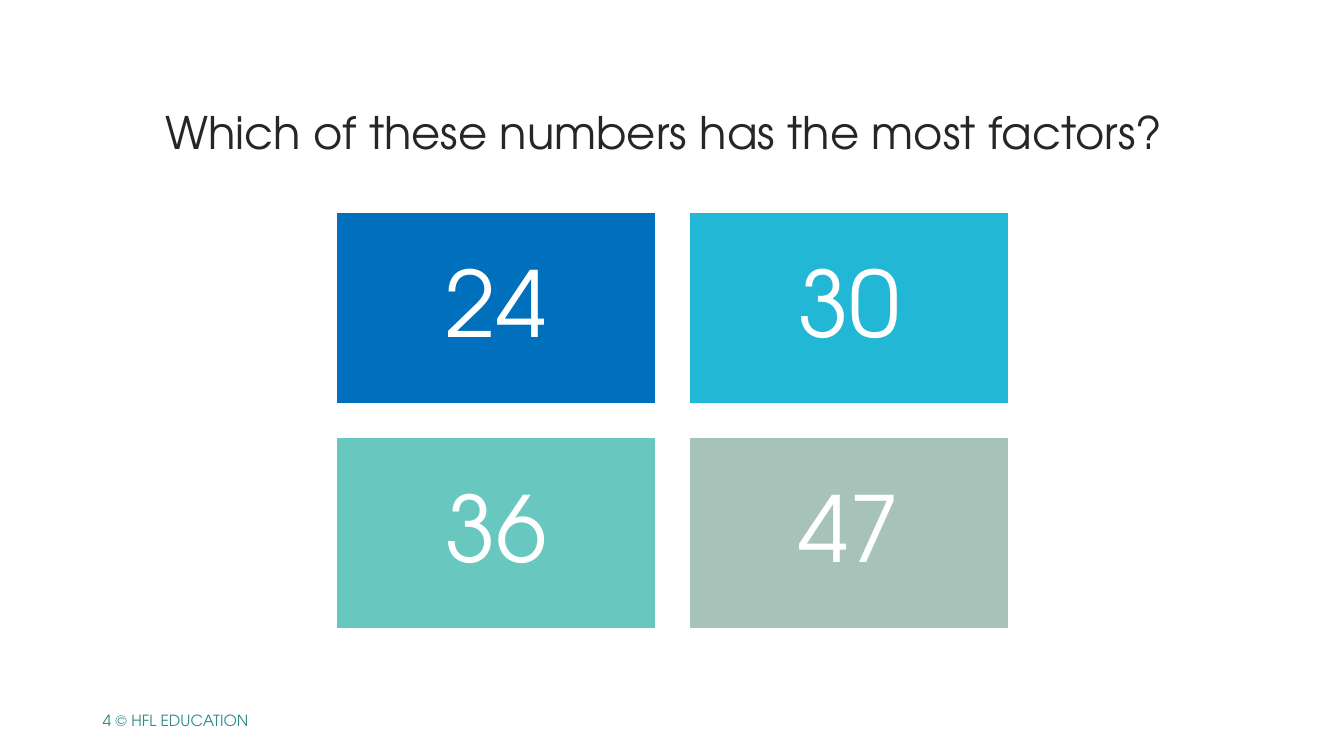
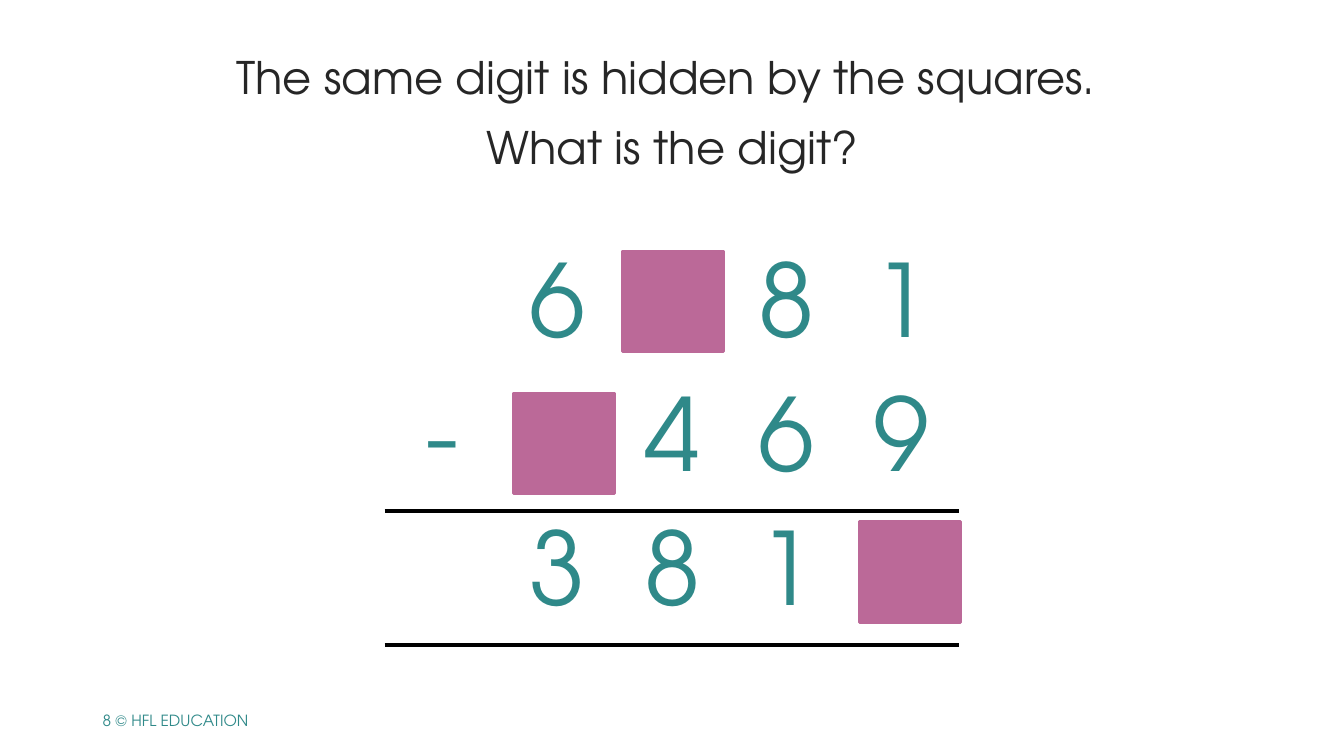
import pptx
import pptx.dml.color
import pptx.enum.shapes
import pptx.enum.text
import pptx.oxml
import pptx.oxml.ns
import pptx.util

Inches, Pt = pptx.util.Inches, pptx.util.Pt
MIDDLE = pptx.enum.text.MSO_ANCHOR.MIDDLE
LEFT = pptx.enum.text.PP_ALIGN.LEFT
CENTER = pptx.enum.text.PP_ALIGN.CENTER
RECTANGLE = pptx.enum.shapes.MSO_SHAPE.RECTANGLE

FONT = "TeX Gyre Adventor"
INK, TEAL, PINK, WHITE, BLACK = "262626", "2F8989", "BB6998", "FFFFFF", "000000"
WIDTH, HEIGHT = 13.33, 7.5


def rgb(code):
    return pptx.dml.color.RGBColor.from_string(code)


def write(frame, lines, size, colour, **paragraph_format):
    for index, line in enumerate(lines):
        paragraph = frame.paragraphs[0] if index == 0 else frame.add_paragraph()
        for name, value in paragraph_format.items():
            setattr(paragraph, name, value)
        run = paragraph.add_run()
        run.text = line
        for name, value in {"name": FONT, "size": Pt(size)}.items():
            setattr(run.font, name, value)
        run.font.color.rgb = rgb(colour)


deck = pptx.Presentation()
deck.slide_width, deck.slide_height = Inches(WIDTH), Inches(HEIGHT)

# Question and footer on every slide: number, box of the question, its lines
questions = [
    (4, (0.37, 0.99, 12.44, 0.9), ["Which of these numbers has the most factors?"]),
    (8, (1.75, 0.44, 9.84, 1.65),
     ["The same digit is hidden by the squares. ", "What is the digit?"]),
]
pages = []
for number, place, lines in questions:
    page = deck.slides.add_slide(deck.slide_layouts[6])
    footer = page.shapes.add_textbox(*map(Inches, (0.92, 6.95, 2.75, 0.4))).text_frame
    footer.word_wrap = True
    footer.vertical_anchor = MIDDLE
    write(footer, [f"{number} © HFL EDUCATION"], 11, TEAL, alignment=LEFT)
    question = page.shapes.add_textbox(*map(Inches, place)).text_frame
    question.word_wrap = True
    write(question, lines, 32, INK, alignment=CENTER, space_after=Pt(12))
    pages.append(page)
factors_page, subtraction_page = pages

# Two by two grid of numbers to choose from
choices = [("24", "0070BD"), ("30", "21B7D5"), ("36", "68C7BF"), ("47", "A6C2B9")]
choice_width, choice_height, gap = 3.18, 1.91, 0.32
choices_left, choices_top = WIDTH / 4, HEIGHT * 0.28
insets = dict.fromkeys(
    ["margin_left", "margin_top", "margin_right", "margin_bottom"], Inches(0.27))
for index, (number, colour) in enumerate(choices):
    row, column = divmod(index, 2)
    choice = factors_page.shapes.add_shape(
        RECTANGLE,
        Inches(choices_left + column * (choice_width + gap)),
        Inches(choices_top + row * (choice_height + gap)),
        Inches(choice_width), Inches(choice_height))
    choice.shadow.inherit = False
    choice.fill.solid()
    choice.fill.fore_color.rgb = rgb(colour)
    choice.line.color.rgb = rgb(WHITE)
    choice.line.width = Pt(2)
    for name, value in {**insets, "vertical_anchor": MIDDLE, "word_wrap": True}.items():
        setattr(choice.text_frame, name, value)
    write(choice.text_frame, [number], 65, WHITE,
          alignment=CENTER, line_spacing=0.9, space_after=Pt(23))

# Column subtraction, centred across the slide
digits = [" 6 81", "- 469", " 381 "]
digit_width, digit_height = 1.14, 1.33
sum_left, sum_top = (WIDTH - 5 * digit_width) / 2, 2.41
subtraction = subtraction_page.shapes.add_table(
    3, 5, Inches(sum_left), Inches(sum_top),
    Inches(5 * digit_width), Inches(3 * digit_height)).table
subtraction.first_row = subtraction.horz_banding = False
# Plain table style without any grid lines
style = subtraction._tbl.tblPr.find(pptx.oxml.ns.qn("a:tableStyleId"))
style.text = "{2D5ABB26-0587-4C30-8999-92F81FD0307C}"
for column in subtraction.columns:
    column.width = Inches(digit_width)
ruled_sides = [[], ["lnB"], ["lnT", "lnB"]]
for row, (symbols, sides) in enumerate(zip(digits, ruled_sides)):
    subtraction.rows[row].height = Inches(digit_height)
    for column, symbol in enumerate(symbols):
        cell = subtraction.cell(row, column)
        cell.vertical_anchor = MIDDLE
        for side in sides:
            cell._tc.get_or_add_tcPr().append(pptx.oxml.parse_xml(
                f'<a:{side} {pptx.oxml.ns.nsdecls("a")} w="{Pt(3)}"><a:solidFill>'
                f'<a:srgbClr val="{BLACK}"/></a:solidFill></a:{side}>'))
        cell.fill.background()
        if symbol.strip():
            write(cell.text_frame, [symbol], 72, TEAL, alignment=CENTER)

# Squares hiding digits, placed in columns and rows of the subtraction
for column, row in [(2.07, 0.06), (4.13, 2.08), (1.12, 1.12)]:
    square = subtraction_page.shapes.add_shape(
        RECTANGLE, Inches(sum_left + column * digit_width),
        Inches(sum_top + row * digit_height), Inches(1), Inches(1))
    square.shadow.inherit = False
    square.fill.solid()
    square.fill.fore_color.rgb = rgb(PINK)
    square.line.color.rgb = rgb(PINK)
    square.line.width = Pt(2)

deck.save("out.pptx")
